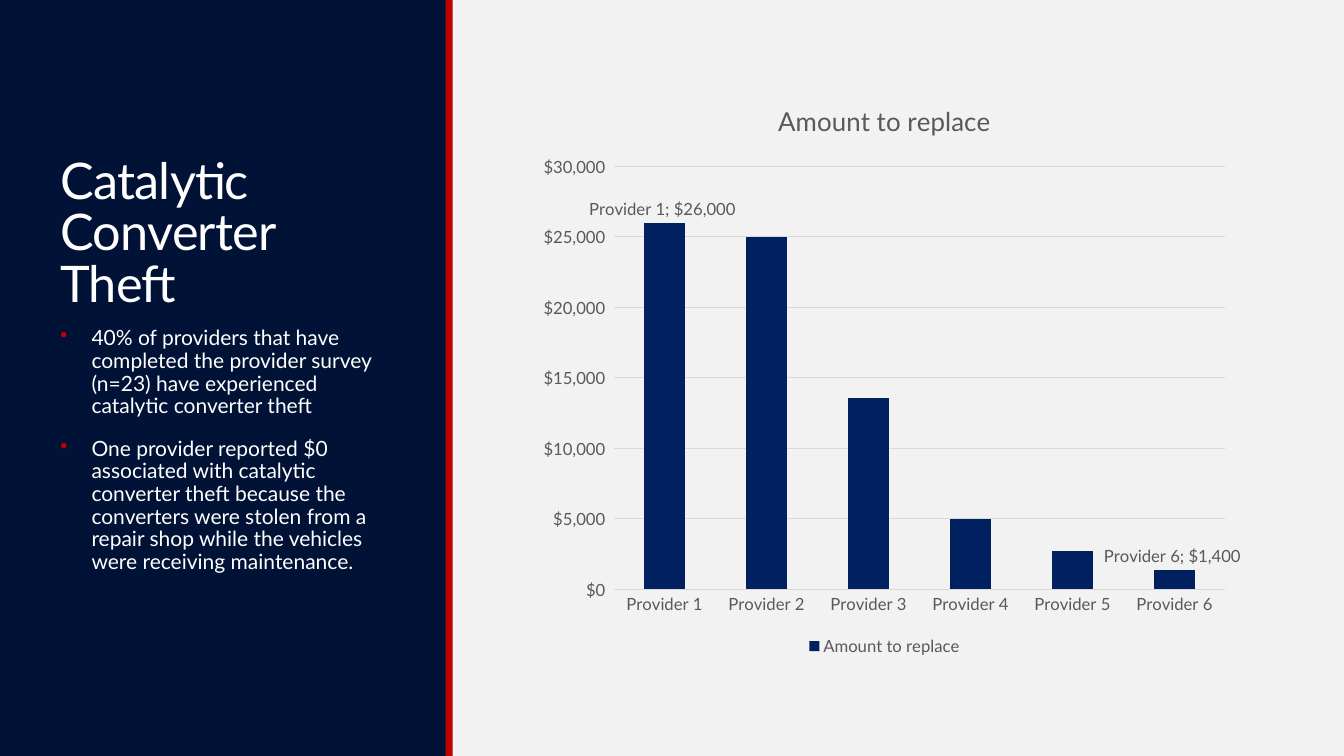
from dataclasses import dataclass

from lxml import etree
from pptx import Presentation
from pptx.chart.data import CategoryChartData
from pptx.dml.color import RGBColor
from pptx.enum.chart import (XL_CHART_TYPE, XL_LABEL_POSITION,
                             XL_LEGEND_POSITION, XL_TICK_MARK)
from pptx.enum.shapes import MSO_SHAPE
from pptx.enum.text import MSO_ANCHOR
from pptx.oxml.ns import qn
from pptx.util import Inches, Pt

COLUMN = XL_CHART_TYPE.COLUMN_CLUSTERED
LABEL_ABOVE = XL_LABEL_POSITION.OUTSIDE_END
LEGEND_BOTTOM = XL_LEGEND_POSITION.BOTTOM
NO_TICK = XL_TICK_MARK.NONE
RECT = MSO_SHAPE.RECTANGLE
TOP, BOTTOM = MSO_ANCHOR.TOP, MSO_ANCHOR.BOTTOM

DOLLARS = '"$"#,##0_);[Red]\\("$"#,##0\\)'
AMOUNTS = [26000, 25000, 13600, 5000, 2700, 1400]
LABELLED = (0, 5)
POINTS = [
    "40% of providers that have completed the provider survey (n=23) have "
    "experienced catalytic converter theft",
    "One provider reported $0 associated with catalytic converter theft "
    "because the converters were stolen from a repair shop while the "
    "vehicles were receiving maintenance.",
]


@dataclass(frozen=True)
class Theme:
    font: str = "Lato"
    background: str = "F2F2F2"
    panel: str = "001236"
    accent: str = "C00000"
    light: str = "FFFFFF"
    bar: str = "002060"
    muted: str = "595959"
    grid: str = "D9D9D9"
    title_size: float = 36
    body_size: float = 15
    chart_title_size: float = 18.6
    chart_size: float = 12


def rgb(value):
    return RGBColor.from_string(value)


def set_font(font, name, size, color):
    font.name, font.size, font.bold = name, Pt(size), False
    font.color.rgb = rgb(color)


def add_bullet(p, color, indent):
    """Give the paragraph a coloured bullet with a hanging indent."""
    pPr = p._p.get_or_add_pPr()
    pPr.set("marL", str(Inches(indent)))
    pPr.set("indent", str(-Inches(indent)))
    bu_clr = etree.SubElement(pPr, qn("a:buClr"))
    etree.SubElement(bu_clr, qn("a:srgbClr"), val=color)
    etree.SubElement(pPr, qn("a:buChar"), char="•")


def write_text(p, text, *, name, size, color, line=1.0, before=0, after=0,
               tracking=0):
    """Add one formatted run; tracking is letter spacing in points."""
    p.line_spacing = line
    p.space_before, p.space_after = Pt(before), Pt(after)
    r = p.add_run()
    r.text = text
    set_font(r.font, name, size, color)
    if tracking:
        r._r.get_or_add_rPr().set("spc", str(round(tracking * 100)))


class SlideBuilder:
    def __init__(self, prs, theme):
        self.theme = theme
        self.slide = prs.slides.add_slide(prs.slide_layouts[6])
        fill = self.slide.background.fill
        fill.solid()
        fill.fore_color.rgb = rgb(theme.background)

    def rect(self, box, color):
        s = self.slide.shapes.add_shape(RECT, *map(Inches, box))
        s.shadow.inherit = False
        s.fill.solid()
        s.fill.fore_color.rgb = rgb(color)
        s.line.fill.background()

    def text_frame(self, box, anchor):
        tf = self.slide.shapes.add_textbox(*map(Inches, box)).text_frame
        tf.word_wrap = True
        tf.vertical_anchor = anchor
        return tf

    def title(self, box, text):
        t = self.theme
        tf = self.text_frame(box, BOTTOM)
        write_text(tf.paragraphs[0], text, name=t.font, size=t.title_size,
                   color=t.light, line=0.85, tracking=-0.5)

    def bullets(self, box, items):
        t = self.theme
        tf = self.text_frame(box, TOP)
        for i, item in enumerate(items):
            p = tf.add_paragraph() if i else tf.paragraphs[0]
            add_bullet(p, t.accent, 0.31)
            write_text(p, item, name=t.font, size=t.body_size, color=t.light,
                       line=0.9, before=12 if i else 0, after=2)

    def chart_font(self, font):
        set_font(font, self.theme.font, self.theme.chart_size, self.theme.muted)

    def column_chart(self, box, name, categories, values, labelled):
        t = self.theme
        data = CategoryChartData(number_format=DOLLARS)
        data.categories = categories
        data.add_series(name, values)
        chart = self.slide.shapes.add_chart(
            COLUMN, *map(Inches, box), data).chart
        self.chart_font(chart.font)

        chart.has_title = True
        write_text(chart.chart_title.text_frame.paragraphs[0], name,
                   name=t.font, size=t.chart_title_size, color=t.muted)
        chart.has_legend = True
        chart.legend.position = LEGEND_BOTTOM
        chart.legend.include_in_layout = False
        self.chart_font(chart.legend.font)

        for axis in (chart.category_axis, chart.value_axis):
            axis.major_tick_mark = axis.minor_tick_mark = NO_TICK
            axis.format.line.fill.background()
            self.chart_font(axis.tick_labels.font)
        grid = chart.value_axis.major_gridlines.format.line
        grid.color.rgb = rgb(t.grid)
        grid.width = Pt(0.75)
        chart.value_axis.tick_labels.number_format = DOLLARS
        chart.value_axis.tick_labels.number_format_is_linked = False

        plot = chart.plots[0]
        plot.vary_by_categories = False
        plot.gap_width = 150
        series = plot.series[0]
        series.format.fill.solid()
        series.format.fill.fore_color.rgb = rgb(t.bar)
        series.data_labels.show_value = False
        for i in labelled:
            self.point_label(series, i)

    def point_label(self, series, index):
        """Label one column with its category and value."""
        label = series.points[index].data_label
        self.chart_font(label.font)
        label.position = LABEL_ABOVE
        for dLbl in series._element.iter(qn("c:dLbl")):
            if dLbl.find(qn("c:idx")).get("val") == str(index):
                dLbl.find(qn("c:showCatName")).set("val", "1")
                etree.SubElement(dLbl, qn("c:separator")).text = "; "


def main():
    prs = Presentation()
    prs.slide_width, prs.slide_height = Inches(13.33), Inches(7.5)
    theme = Theme()
    slide = SlideBuilder(prs, theme)
    slide.rect((0, 0, 4.43, 7.5), theme.panel)
    slide.rect((4.42, 0, 0.07, 7.5), theme.accent)
    slide.title((0.5, 0.65, 3.5, 2.5), "Catalytic Converter Theft")
    providers = [f"Provider {n}" for n in range(1, len(AMOUNTS) + 1)]
    slide.column_chart((5.25, 0.8, 7.1, 5.75), "Amount to replace",
                       providers, AMOUNTS, LABELLED)
    slide.bullets((0.5, 3.2, 3.5, 3.7), POINTS)
    prs.save("out.pptx")


if __name__ == "__main__":
    main()
